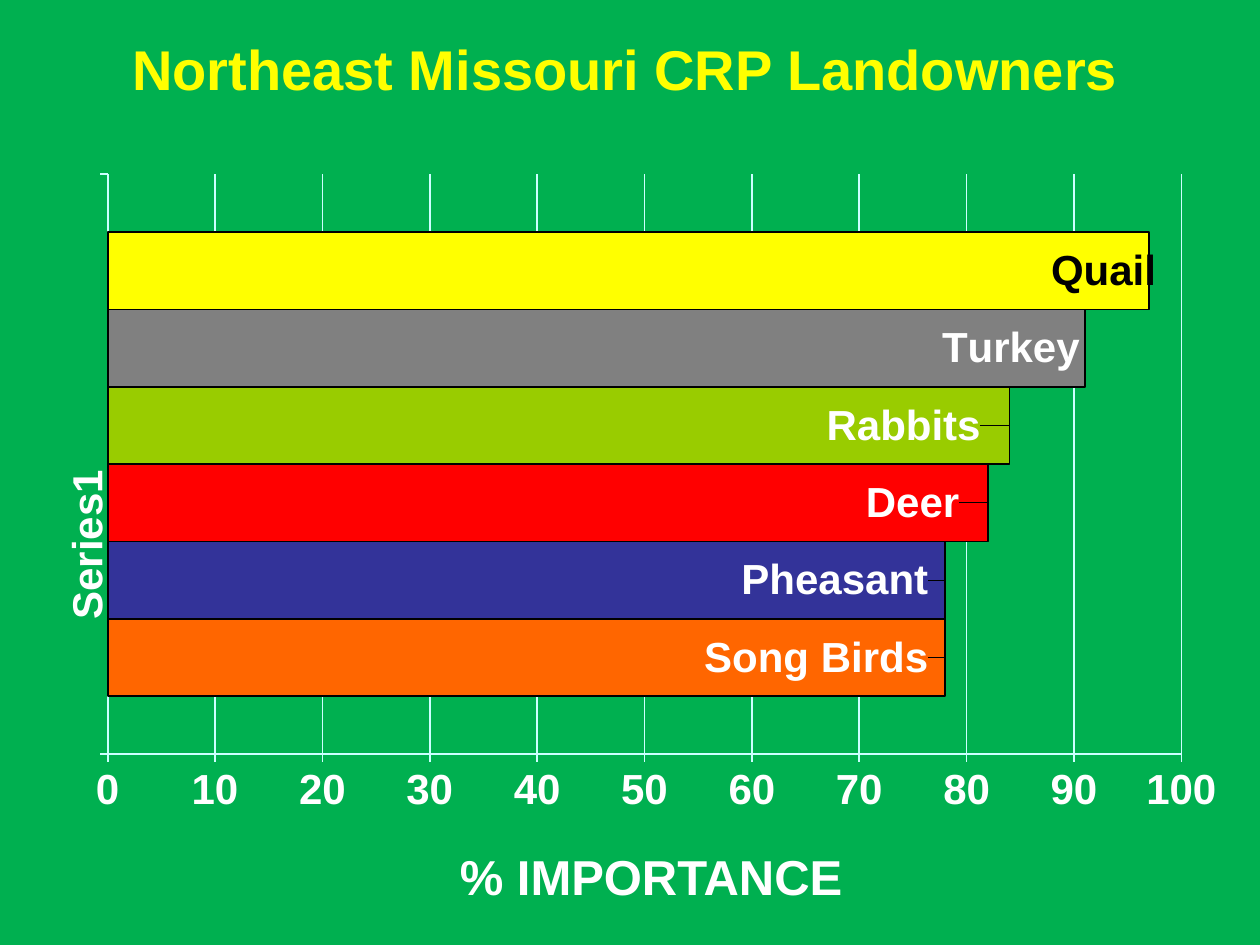
from pptx import Presentation
from pptx.chart.data import CategoryChartData as ChartData
from pptx.dml.color import RGBColor as RGB
from pptx.enum.chart import (XL_CHART_TYPE as Kind, XL_LABEL_POSITION as Pos,
                             XL_TICK_LABEL_POSITION as TickPos, XL_TICK_MARK as Tick)
from pptx.enum.text import MSO_ANCHOR as Anchor, PP_ALIGN as Align
from pptx.oxml import parse_xml
from pptx.oxml.ns import nsdecls
from pptx.util import Cm, Pt

GREEN = RGB(0x00, 0xB0, 0x50)
YELLOW = RGB(0xFF, 0xFF, 0x00)
WHITE = RGB(0xFF, 0xFF, 0xFF)
BLACK = RGB(0x00, 0x00, 0x00)
GREY = RGB(0x80, 0x80, 0x80)
LIME = RGB(0x99, 0xCC, 0x00)
RED = RGB(0xFF, 0x00, 0x00)
BLUE = RGB(0x33, 0x33, 0x99)
ORANGE = RGB(0xFF, 0x66, 0x00)
PALE = RGB(0xCC, 0xFF, 0xFF)
FONT = "Arial"
LINE = Pt(0.93)

# Content: name, importance, bar colour, label colour, label shift
TITLE = "Northeast Missouri CRP Landowners"
CAPTION = "% IMPORTANCE"
SIDE = "Series1"
BARS = [
    ("Song Birds", 78, ORANGE, WHITE, -0.01),
    ("Pheasant", 78, BLUE, WHITE, -0.01),
    ("Deer", 82, RED, WHITE, -0.02),
    ("Rabbits", 84, LIME, WHITE, -0.02),
    ("Turkey", 91, GREY, WHITE, 0),
    ("Quail", 97, YELLOW, BLACK, 0.01),
]


def style(font, size, color):
    font.name, font.size, font.bold = FONT, Pt(size), True
    font.color.rgb = color


def write(frame, text, size=24, color=WHITE, align=Align.CENTER):
    para = frame.paragraphs[0]
    para.alignment = align
    run = para.add_run()
    run.text = text
    style(run.font, size, color)


def edge(line, color):
    line.color.rgb = color
    line.width = LINE


def layout(x, y, w=None, h=None):
    """Manual chart layout; a size makes it the inner plot area."""
    tags = [("x", x), ("y", y)]
    if w is not None:
        tags = [("layoutTarget", "inner"), ("xMode", "edge"),
                ("yMode", "edge")] + tags + [("w", w), ("h", h)]
    body = "".join(f'<c:{tag} val="{val}"/>' for tag, val in tags)
    return parse_xml(f'<c:layout {nsdecls("c")}><c:manualLayout>{body}'
                     '</c:manualLayout></c:layout>')


def place(parent, item, index):
    for old in parent.xpath("./c:layout"):
        parent.remove(old)
    parent.insert(index, item)


deck = Presentation()
deck.slide_width, deck.slide_height = Cm(25.4), Cm(19.05)
slide = deck.slides.add_slide(deck.slide_layouts[5])
slide.background.fill.solid()
slide.background.fill.fore_color.rgb = GREEN

# Title
title = slide.shapes.title
title.left, title.top, title.width, title.height = Cm(0.64), Cm(0.43), Cm(23.93), Cm(1.9)
title.text_frame.vertical_anchor = Anchor.MIDDLE
write(title.text_frame, TITLE, size=32, color=YELLOW)

# Chart
data = ChartData()
data.categories = [""]
for name, value, *_ in BARS:
    data.add_series(name, [value])
chart = slide.shapes.add_chart(Kind.BAR_CLUSTERED, Cm(0.56), Cm(3.18),
                               Cm(24.05), Cm(13.97), data).chart
style(chart.font, 24, WHITE)
chart.has_legend = chart.has_title = False
plot = chart.plots[0]
plot.gap_width, plot.overlap, plot.vary_by_categories = 150, 0, False
place(chart.element.xpath(".//c:plotArea")[0], layout(0.067, 0.024, 0.9, 0.837), 0)

# Axes
cat, val = chart.category_axis, chart.value_axis
for axis in (cat, val):
    axis.major_tick_mark, axis.minor_tick_mark = Tick.OUTSIDE, Tick.NONE
    edge(axis.format.line, PALE)
cat.tick_label_position = TickPos.NONE
val.minimum_scale, val.maximum_scale, val.major_unit = 0, 100, 10
val.has_major_gridlines = True
edge(val.major_gridlines.format.line, PALE)
write(cat.axis_title.text_frame, SIDE)
cat.axis_title.text_frame._txBody.bodyPr.set("rot", "-5400000")
spot = layout(0.02, 0.44)
for tag in ("yMode", "xMode"):
    spot[0].insert(0, parse_xml(f'<c:{tag} {nsdecls("c")} val="edge"/>'))
place(chart.element.xpath(".//c:catAx/c:title")[0], spot, 1)

# Bars and their names
for series, (_, _, fill, ink, shift) in zip(plot.series, BARS):
    series.format.fill.solid()
    series.format.fill.fore_color.rgb = fill
    edge(series.format.line, BLACK)
    labels = series.data_labels
    labels.show_series_name, labels.show_value = True, False
    label = series.points[0].data_label
    style(label.font, 24, ink)
    label.position = Pos.INSIDE_END
    node = series._element.xpath("./c:dLbls/c:dLbl")[0]
    node.xpath("./c:showVal")[0].set("val", "0")
    node.xpath("./c:showSerName")[0].set("val", "1")
    place(node, layout(shift, 0), 1)

# Caption under the chart
box = slide.shapes.add_textbox(Cm(8.26), Cm(16.94), Cm(9.73), Cm(1.45))
box.text_frame.word_wrap = True
write(box.text_frame, CAPTION, size=28)

deck.save("out.pptx")
